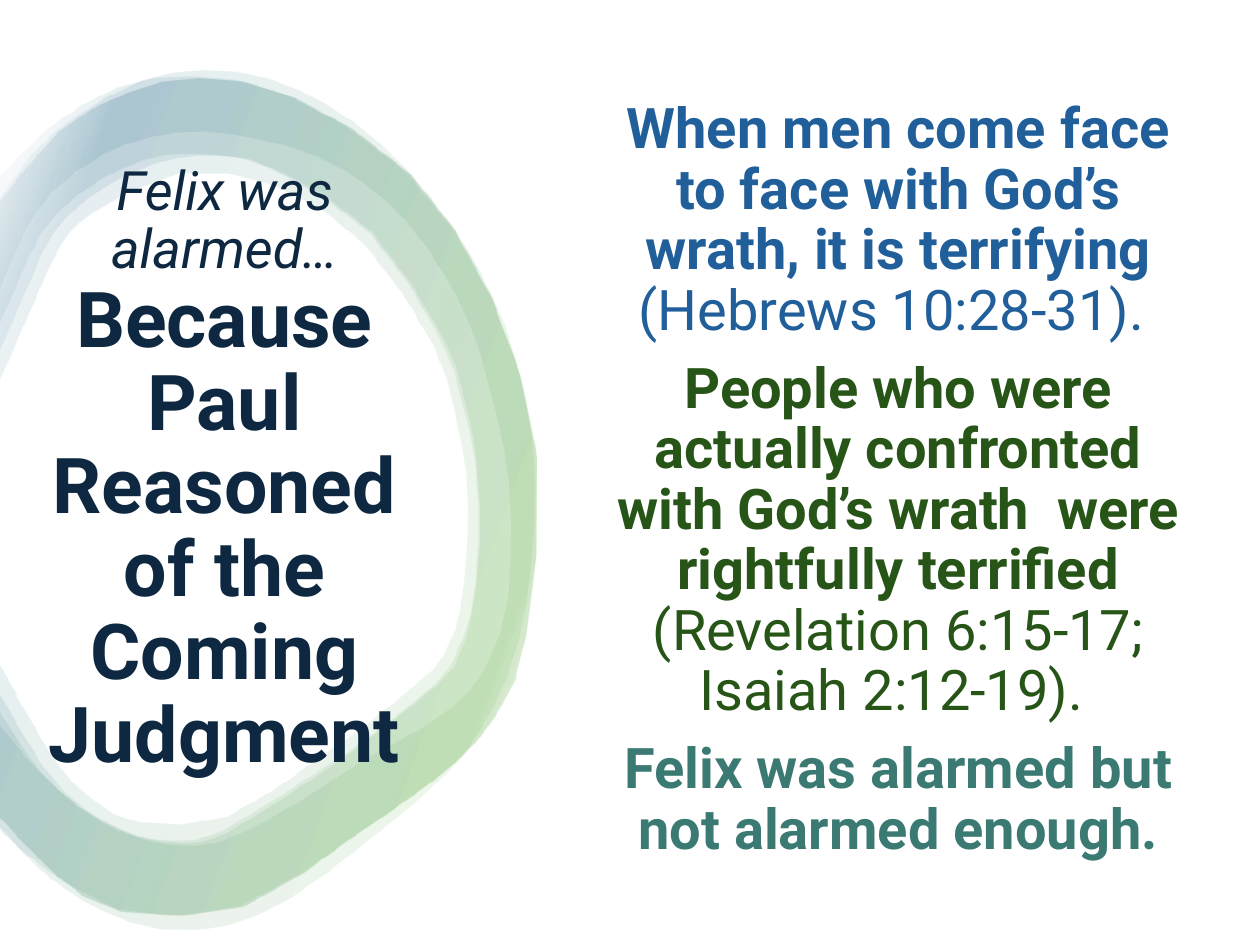
from pptx import Presentation
from pptx.dml.color import RGBColor
from pptx.enum.shapes import MSO_SHAPE
from pptx.enum.text import MSO_ANCHOR, PP_ALIGN
from pptx.oxml import parse_xml
from pptx.oxml.ns import nsdecls, qn
from pptx.util import Emu, Pt

PX = 914400 / 126
WIDTH, HEIGHT = 1260, 945
COLORS = {
    "paper": "FFFFFF", "navy": "0E2841", "blue": "215F9A", "forest": "275417",
    "teal": "3B7973", "ring_green": "4EA72E", "ring_blue": "156082",
}
RING_STOPS = [(2, "paper"), (16, "ring_green"), (85, "ring_blue"), (100, "paper")]
RING_ALPHA = 10

# Ring outlines in px, outer edges clockwise and inner edges counter-clockwise
FLANK = [(491, 299), (536, 459), (525, 635), (499, 708), (459, 758), (409, 797), (354, 835)]
HALO_OUTER = [
    (-2, 202), (32, 155), (77, 116), (142, 81), (205, 71), (268, 79), (328, 106),
    (382, 146), (430, 198), (471, 257), (504, 326), (525, 402), (534, 483), (530, 562),
    (518, 640), (489, 714), (445, 774), (370, 838), (291, 897), (229, 924), (163, 929),
    (97, 908), (39, 868), (-2, 823)]
HALO_INNER = [
    (-2, 721), (29, 760), (72, 801), (118, 830), (168, 844), (217, 842), (266, 820),
    (316, 790), (369, 756), (422, 727), (469, 690), (499, 633), (510, 559), (508, 485),
    (495, 413), (473, 336), (447, 281), (410, 227), (364, 184), (314, 156), (260, 140),
    (205, 132), (152, 137), (101, 156), (53, 192), (23, 236), (-2, 297)]
WIDE_OUTER = [
    (-2, 180), (48, 129), (117, 88), (192, 77), (286, 95), (405, 172), *FLANK,
    (240, 905), (116, 908), (20, 848), (-2, 823)]
WIDE_INNER = [
    (-2, 707), (35, 764), (79, 806), (130, 833), (175, 840), (222, 830), (323, 767),
    (367, 737), (436, 682), (456, 651), (469, 615), (478, 542), (475, 470), (461, 401),
    (438, 336), (368, 232), (271, 169), (218, 156), (168, 155), (122, 169), (78, 195),
    (43, 231), (19, 281), (-2, 329)]
BAND_OUTER = [
    (-2, 205), (59, 132), (128, 93), (199, 79), (292, 97), (409, 174), *FLANK,
    (244, 906), (122, 911), (57, 875), (-2, 814)]
THICK_INNER = [
    (-2, 659), (52, 756), (93, 799), (140, 822), (227, 816), (320, 756), (364, 725),
    (431, 670), (447, 644), (459, 611), (466, 542), (465, 473), (452, 407), (432, 345),
    (363, 244), (275, 186), (179, 174), (93, 213), (62, 244), (39, 292), (-2, 386)]
THIN_INNER = [
    (-2, 689), (44, 767), (87, 810), (137, 835), (183, 843), (227, 832), (326, 769),
    (369, 737), (438, 683), (459, 653), (470, 615), (479, 542), (476, 470), (464, 402),
    (442, 338), (370, 231), (278, 171), (227, 157), (176, 159), (132, 173), (88, 199),
    (53, 234), (29, 285), (-2, 357)]
RINGS = [(HALO_OUTER, HALO_INNER), (WIDE_OUTER, WIDE_INNER),
         (BAND_OUTER, THICK_INNER), (BAND_OUTER, THIN_INNER)]

# Wording: each paragraph is a list of (text, font format)
TITLE = [[
    ("Felix was alarmed…", {"size": 31, "color": "navy", "italic": True}),
    ("Because Paul Reasoned of the Coming Judgment",
     {"size": 44, "color": "navy", "bold": True}),
]]
POINTS = [
    ("blue", "When men come face to face with God’s wrath, it is terrifying ",
     "(Hebrews 10:28-31). "),
    ("forest", "People who were actually confronted with God’s wrath  were rightfully terrified ",
     "(Revelation 6:15-17; Isaiah 2:12-19). "),
    ("teal", "Felix was alarmed but not alarmed enough.", ""),
]


def smooth(anchors):
    """Anchors with the Catmull-Rom midpoint added between each pair."""
    padded = [anchors[0], *anchors, anchors[-1]]
    curve = []
    for a, b, c, d in zip(padded, padded[1:], padded[2:], padded[3:]):
        middle = tuple((9 * (q + r) - p - s) / 16 for p, q, r, s in zip(a, b, c, d))
        curve += [b, middle]
    return curve + [anchors[-1]]


class SlidePainter:
    font = "Roboto"
    line_spacing = 0.9

    def __init__(self, slide):
        self.slide = slide

    def emu(self, *lengths):
        return [Emu(round(length * PX)) for length in lengths]

    def color(self, name):
        return RGBColor.from_string(COLORS[name])

    def panel(self, box, fill):
        panel = self.slide.shapes.add_shape(MSO_SHAPE.RECTANGLE, *self.emu(*box))
        panel.shadow.inherit = False
        panel.fill.solid()
        panel.fill.fore_color.rgb = self.color(fill)
        panel.line.fill.background()

    def ring(self, outer, inner):
        start, *rest = [self.emu(*point) for point in smooth(outer) + smooth(inner)]
        builder = self.slide.shapes.build_freeform(*start)
        builder.add_line_segments(rest, close=True)
        ring = builder.convert_to_shape()
        ring.shadow.inherit = False
        ring.line.fill.background()
        ring.fill.gradient()
        ring.fill.gradient_angle = 160
        # Translucent gradient stops
        stops = ring._element.spPr.find(qn("a:gradFill")).find(qn("a:gsLst"))
        for stop in list(stops):
            stops.remove(stop)
        for position, name in RING_STOPS:
            stops.append(parse_xml(
                f'<a:gs {nsdecls("a")} pos="{position * 1000}">'
                f'<a:srgbClr val="{COLORS[name]}"><a:alpha val="{RING_ALPHA * 1000}"/>'
                f'</a:srgbClr></a:gs>'))

    def text(self, box, paragraphs, space_before=0, break_runs=False):
        frame = self.slide.shapes.add_textbox(*self.emu(*box)).text_frame
        frame.word_wrap = True
        frame.vertical_anchor = MSO_ANCHOR.MIDDLE
        layout = {"alignment": PP_ALIGN.CENTER, "line_spacing": self.line_spacing,
                  "space_before": Pt(space_before)}
        for index, runs in enumerate(paragraphs):
            paragraph = frame.add_paragraph() if index else frame.paragraphs[0]
            for key, value in layout.items():
                setattr(paragraph, key, value)
            for position, (words, style) in enumerate(runs):
                if position and break_runs:
                    paragraph.add_line_break()
                self.run(paragraph, words, **style)

    def run(self, paragraph, words, size, color, bold=False, italic=False):
        run = paragraph.add_run()
        run.text = words
        run.font.color.rgb = self.color(color)
        values = {"name": self.font, "size": Pt(size), "bold": bold, "italic": italic}
        for key, value in values.items():
            setattr(run.font, key, value)


def main():
    deck = Presentation()
    deck.slide_width, deck.slide_height = (Emu(round(side * PX)) for side in (WIDTH, HEIGHT))
    painter = SlidePainter(deck.slides.add_slide(deck.slide_layouts[6]))

    # Backdrop and watercolour ring
    painter.panel((0, 0, WIDTH, HEIGHT), "paper")
    for outer, inner in RINGS:
        painter.ring(outer, inner)

    # Title inside the ring
    painter.text((6, 151, 437, 641), TITLE, break_runs=True)

    # Points: bold statement, then plain scripture reference
    points = [[(words, {"size": 32, "color": color, "bold": bold})
               for words, bold in ((statement, True), (reference, False)) if words]
              for color, statement, reference in POINTS]
    painter.text((583, 16, 631, 930), points, space_before=10)

    deck.save("out.pptx")


if __name__ == "__main__":
    main()
